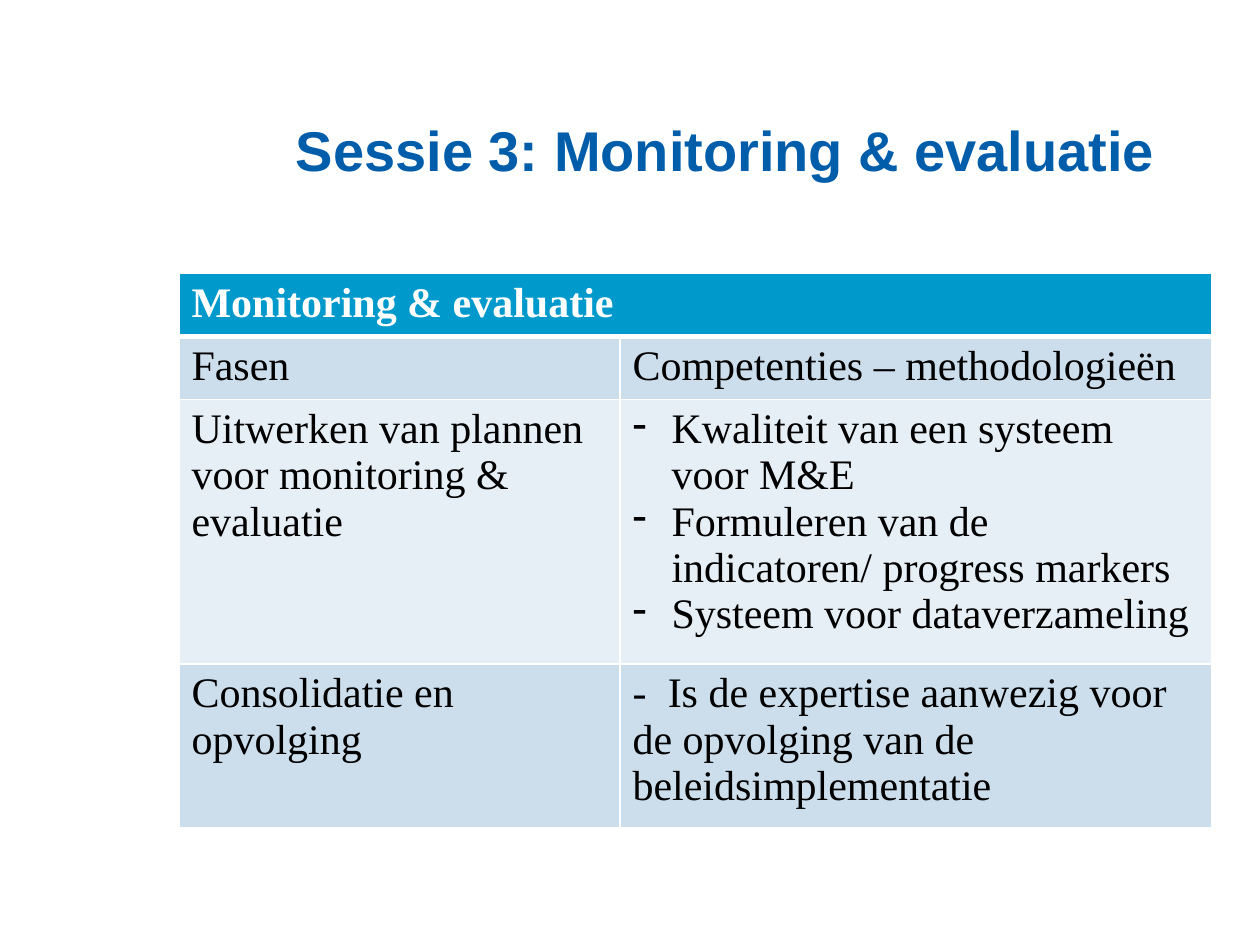
"""Build the slide on session 3, monitoring and evaluation."""
from lxml.etree import SubElement
from pptx import Presentation
from pptx.dml.color import RGBColor
from pptx.enum.text import MSO_ANCHOR
from pptx.oxml.ns import qn
from pptx.util import Inches, Pt

TITLE_BLUE = RGBColor(0x00, 0x5D, 0xAA)
HEADER_BLUE = RGBColor(0x00, 0x99, 0xCC)
BAND_DARK = RGBColor(0xCC, 0xDE, 0xEC)
BAND_LIGHT = RGBColor(0xE7, 0xEF, 0xF6)
WHITE = RGBColor(0xFF, 0xFF, 0xFF)
BLACK = RGBColor(0x00, 0x00, 0x00)

ROWS = [
    (0.46, HEADER_BLUE, [["Monitoring & evaluatie"], []]),
    (0.46, BAND_DARK, [["Fasen"], ["Competenties – methodologieën"]]),
    (1.95, BAND_LIGHT, [
        ["Uitwerken van plannen voor monitoring & evaluatie"],
        ["Kwaliteit van een systeem voor M&E",
         "Formuleren van de indicatoren/ progress markers",
         "Systeem voor dataverzameling"],
    ]),
    (1.2, BAND_DARK, [
        ["Consolidatie en opvolging"],
        ["-\tIs de expertise aanwezig voor de opvolging van de beleidsimplementatie"],
    ]),
]


def add_borders(cell, bottom_width):
    properties = cell._tc.get_or_add_tcPr()
    for side, width in (("L", 1), ("R", 1), ("T", 1), ("B", bottom_width)):
        border = SubElement(properties, qn(f"a:ln{side}"), w=str(Pt(width)))
        color = SubElement(SubElement(border, qn("a:solidFill")), qn("a:srgbClr"))
        color.set("val", str(WHITE))


def add_run(paragraph, text, font_name, size, color, bold):
    run = paragraph.add_run()
    run.text = text
    run.font.name = font_name
    run.font.size = Pt(size)
    run.font.bold = bold
    run.font.color.rgb = color


prs = Presentation()
prs.slide_width, prs.slide_height = Inches(10), Inches(7.5)
slide = prs.slides.add_slide(prs.slide_layouts[6])

title = slide.shapes.add_textbox(Inches(2.25), Inches(0.75), Inches(7.5), Inches(0.75))
title.text_frame.word_wrap = True
title.text_frame.vertical_anchor = MSO_ANCHOR.BOTTOM
add_run(title.text_frame.paragraphs[0], "Sessie 3: Monitoring & evaluatie",
        "Arial", 32, TITLE_BLUE, True)

phases = slide.shapes.add_table(
    len(ROWS), 2, Inches(1.42), Inches(2.17), Inches(8.2),
    Inches(sum(height for height, _, _ in ROWS))).table
phases.columns[0].width = Inches(3.5)
phases.columns[1].width = Inches(4.7)
phases.cell(0, 0).merge(phases.cell(0, 1))

for row_index, (height, fill, texts) in enumerate(ROWS):
    is_header = row_index == 0
    phases.rows[row_index].height = Inches(height)
    for column_index, lines in enumerate(texts):
        cell = phases.cell(row_index, column_index)
        add_borders(cell, 3 if is_header else 1)
        cell.fill.solid()
        cell.fill.fore_color.rgb = fill
        for line_index, line in enumerate(lines):
            frame = cell.text_frame
            paragraph = frame.add_paragraph() if line_index else frame.paragraphs[0]
            layout = paragraph._p.get_or_add_pPr()
            if len(lines) > 1:
                layout.set("marL", str(Inches(0.31)))
                layout.set("indent", str(Inches(-0.31)))
                SubElement(layout, qn("a:buFontTx"))
                SubElement(layout, qn("a:buChar"), char="-")
            elif "\t" in line:
                stops = SubElement(layout, qn("a:tabLst"))
                SubElement(stops, qn("a:tab"), pos=str(Inches(0.28)), algn="l")
            add_run(paragraph, line, "Times New Roman", 24,
                    WHITE if is_header else BLACK, is_header)

prs.save("out.pptx")
